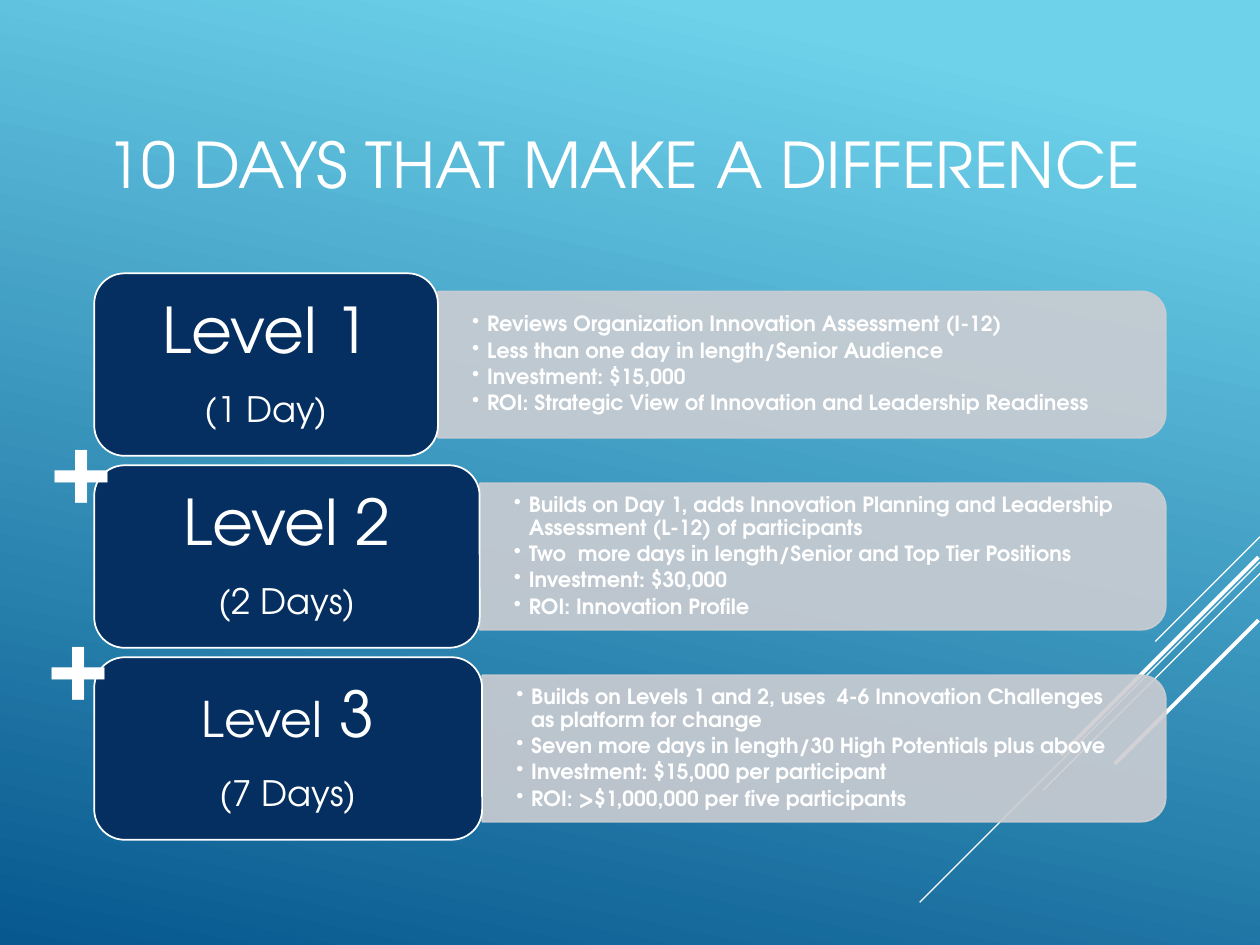
from lxml import etree
from pptx import Presentation
from pptx.dml.color import RGBColor
from pptx.enum.shapes import MSO_CONNECTOR, MSO_SHAPE
from pptx.enum.text import MSO_ANCHOR, PP_ALIGN
from pptx.oxml.ns import qn
from pptx.util import Cm, Pt

STRAIGHT = MSO_CONNECTOR.STRAIGHT
ROUNDED = MSO_SHAPE.ROUNDED_RECTANGLE
TOP_ROUNDED = MSO_SHAPE.ROUND_2_SAME_RECTANGLE
MIDDLE = MSO_ANCHOR.MIDDLE
CENTER = PP_ALIGN.CENTER

WHITE = RGBColor(0xFF, 0xFF, 0xFF)
NAVY = RGBColor(0x05, 0x2F, 0x61)
SILVER = RGBColor(0xCC, 0xCD, 0xD2)
SKY = RGBColor(0x6E, 0xD2, 0xEB)
OCEAN = RGBColor(0x06, 0x58, 0x8E)
FONT = "TeX Gyre Adventor"

PAGE_WIDTH, PAGE_HEIGHT = 25.4, 19.05
ROW_HEIGHT, ROW_PITCH = 3.68, 3.87
PANEL_HEIGHT = 2.95

STREAKS = [
    (25.4, 10.82, 2.11, 0.75),
    (25.4, 11.33, 6.86, 0.75),
    (25.4, 11.56, 4.37, 0.75),
    (25.37, 11.23, 3.99, 2.25),
    (25.37, 12.5, 2.9, 2.25),
]

LEVELS = [
    (6.93, [("Level 1", 36)], "(1 Day)", [
        "Reviews Organization Innovation Assessment (I-12)",
        "Less than one day in length/Senior Audience",
        "Investment: $15,000",
        "ROI: Strategic View of Innovation and Leadership Readiness",
    ]),
    (7.77, [("Level 2", 36)], "(2 Days)", [
        "Builds on Day 1, adds Innovation Planning and Leadership "
        "Assessment (L-12) of participants",
        "Two  more days in length/Senior and Top Tier Positions",
        "Investment: $30,000",
        "ROI: Innovation Profile",
    ]),
    (7.82, [("Level", 28), (" 3", 36)], "(7 Days)", [
        "Builds on Levels 1 and 2, uses  4-6 Innovation Challenges "
        "as platform for change",
        "Seven more days in length/30 High Potentials plus above",
        "Investment: $15,000 per participant",
        "ROI: >$1,000,000 per five participants",
    ]),
]


def add_span(para, text, size, bold=False):
    span = para.add_run()
    span.text = text
    span.font.name = FONT
    span.font.size = Pt(size)
    span.font.bold = bold
    span.font.color.rgb = WHITE


def set_frame(frame, side, end):
    frame.word_wrap = True
    frame.vertical_anchor = MIDDLE
    frame.margin_left = frame.margin_right = Cm(side)
    frame.margin_top = frame.margin_bottom = Cm(end)


def add_text(page, box, text, size, bold=False):
    text_box = page.shapes.add_textbox(*map(Cm, box))
    set_frame(text_box.text_frame, 0.25, 0.13)
    add_span(text_box.text_frame.paragraphs[0], text, size, bold)


def space_para(para, after):
    para.line_spacing = 0.9
    para.space_after = Pt(after)


def add_bullet(para):
    properties = para._p.get_or_add_pPr()
    properties.set("marL", str(Cm(0.3)))
    properties.set("indent", str(-Cm(0.3)))
    etree.SubElement(properties, qn("a:buChar")).set("char", "•")


def fade(shape):
    for color in shape._element.spPr.iter(qn("a:srgbClr")):
        etree.SubElement(color, qn("a:alpha")).set("val", "90000")


def add_outlined(page, kind, box, fill, line):
    shape = page.shapes.add_shape(kind, *map(Cm, box))
    shape.shadow.inherit = False
    shape.fill.solid()
    shape.fill.fore_color.rgb = fill
    shape.line.color.rgb = line
    shape.line.width = Pt(1)
    return shape


def add_background(page):
    fill = page.background.fill
    fill.gradient()
    fill.gradient_angle = 258
    for stop, color, position in zip(fill.gradient_stops, (SKY, OCEAN), (0.1, 1)):
        stop.color.rgb = color
        stop.position = position


def add_streaks(page):
    for right, top, run, weight in STREAKS:
        streak = page.shapes.add_connector(
            STRAIGHT, Cm(right), Cm(top), Cm(right - run), Cm(top + run))
        streak.line.color.rgb = WHITE
        streak.line.width = Pt(weight)
        etree.SubElement(streak._element.spPr, qn("a:effectLst"))


def add_panel(page, box, points):
    left, top, width, height = box
    turned = (left + (width - height) / 2, top + (height - width) / 2, height, width)
    panel = add_outlined(page, TOP_ROUNDED, turned, SILVER, SILVER)
    panel.rotation = 90
    fade(panel)
    frame = page.shapes.add_textbox(*map(Cm, box)).text_frame
    set_frame(frame, 0.69, 0.36)
    frame.margin_right = Cm(0.8)
    for index, point in enumerate(points):
        para = frame.add_paragraph() if index else frame.paragraphs[0]
        space_para(para, 2.1)
        add_bullet(para)
        add_span(para, point, 12, True)


def add_label(page, box, heading, days):
    frame = add_outlined(page, ROUNDED, box, NAVY, WHITE).text_frame
    set_frame(frame, 0.38, 0.19)
    title, duration = frame.paragraphs[0], frame.add_paragraph()
    for para, after in ((title, 14.7), (duration, 8.1)):
        para.alignment = CENTER
        space_para(para, after)
    for text, size in heading:
        add_span(title, text, size)
    add_span(duration, days, 20)


def add_level(page, box, label_width, heading, days, points):
    left, top, width, height = box
    panel_top = top + (height - PANEL_HEIGHT) / 2
    add_panel(page, (left + label_width, panel_top, width - label_width, PANEL_HEIGHT), points)
    add_label(page, (left, top, label_width, height), heading, days)


def main():
    deck = Presentation()
    deck.slide_width, deck.slide_height = Cm(PAGE_WIDTH), Cm(PAGE_HEIGHT)
    page = deck.slides.add_slide(deck.slide_layouts[6])
    add_background(page)
    add_streaks(page)
    add_text(page, (1.9, 1.7, 21.6, 3.18), "10 DAYS THAT MAKE A DIFFERENCE", 36)
    for index, level in enumerate(LEVELS):
        add_level(page, (1.9, 5.51 + index * ROW_PITCH, 21.6, ROW_HEIGHT), *level)
    for left, top in ((0.64, 12.01), (0.71, 8.05)):
        add_text(page, (left, top, 1.9, 2.57), "+", 54, True)
    deck.save("out.pptx")


if __name__ == "__main__":
    main()
